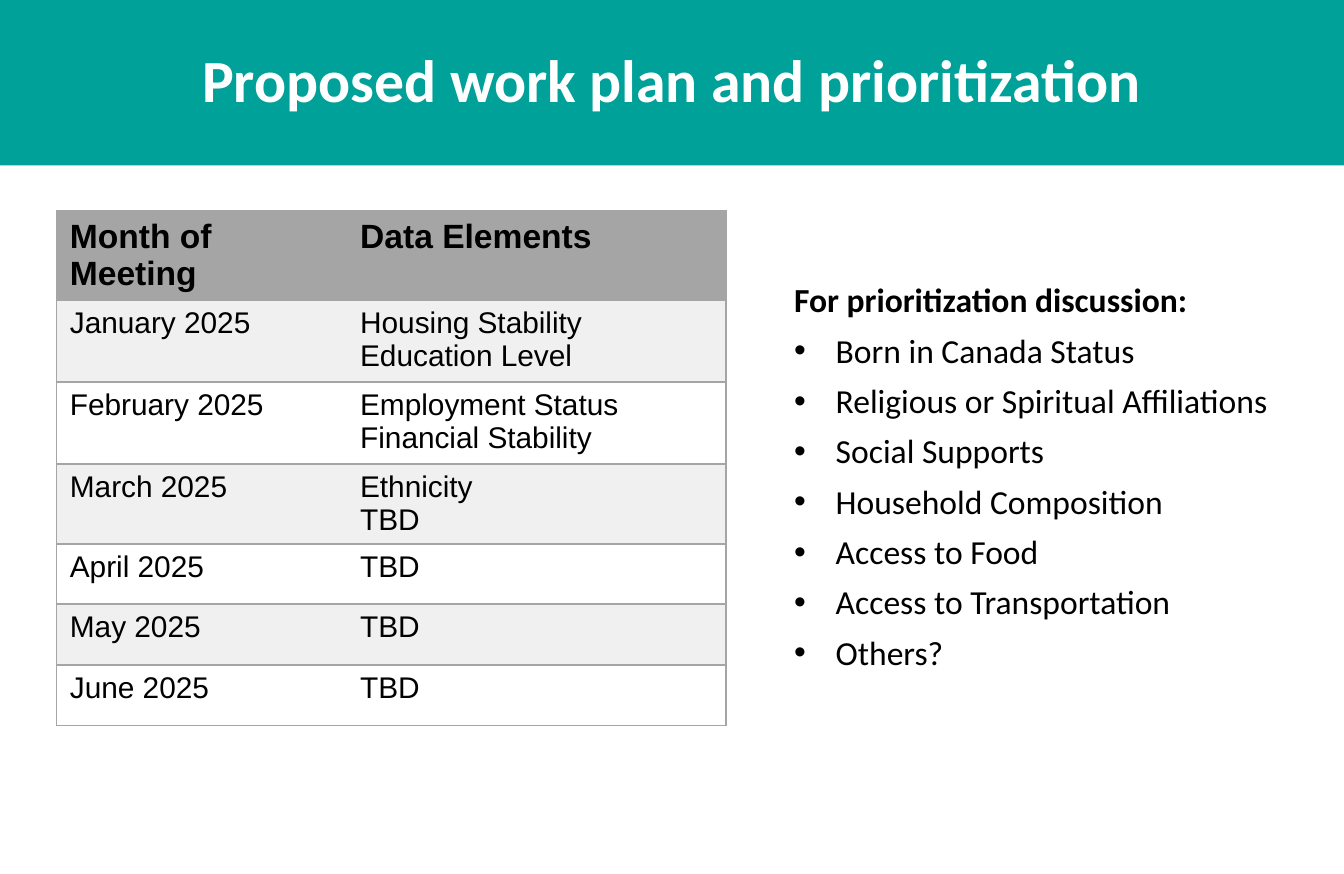
import pptx
import pptx.dml.color
import pptx.enum.shapes
import pptx.enum.text
import pptx.oxml
import pptx.oxml.ns
import pptx.util
from pptx.util import Inches

TEAL, GREY, BAND, WHITE, BLACK = "00A199", "A5A5A5", "F0F0F0", "FFFFFF", "000000"
NO_STYLE_NO_GRID = "{2D5ABB26-0587-4C30-8999-92F81FD0307C}"

SCHEDULE = [
    ("Month of Meeting", "Data Elements"),
    ("January 2025", "Housing Stability\nEducation Level"),
    ("February 2025", "Employment Status\nFinancial Stability"),
    ("March 2025", "Ethnicity\nTBD"),
    ("April 2025", "TBD"),
    ("May 2025", "TBD"),
    ("June 2025", "TBD"),
]
COLUMN_WIDTHS = [2.16, 2.82]
ROW_HEIGHTS = [0.45, 0.61, 0.61, 0.45, 0.45, 0.45, 0.45]

DISCUSSION_TOPICS = [
    "Born in Canada Status",
    "Religious or Spiritual Affiliations",
    "Social Supports",
    "Household Composition",
    "Access to Food",
    "Access to Transportation",
    "Others?",
]


def rgb(hex_color):
    return pptx.dml.color.RGBColor.from_string(hex_color)


def set_fill(target, color):
    target.fill.solid()
    target.fill.fore_color.rgb = rgb(color)


def set_font(paragraph, name, size, color=BLACK, bold=False):
    font = paragraph.font
    font.name, font.size, font.bold = name, pptx.util.Pt(size), bold
    font.color.rgb = rgb(color)


def add_borders(cell, sides, color):
    """Draw 1 pt borders; sides must be in the order L, R, T, B, before any fill."""
    properties = cell._tc.get_or_add_tcPr()
    for side in sides:
        properties.append(pptx.oxml.parse_xml(
            f'<a:ln{side} {pptx.oxml.ns.nsdecls("a")} w="{pptx.util.Pt(1)}">'
            f'<a:solidFill><a:srgbClr val="{color}"/></a:solidFill></a:ln{side}>'))


def add_bullet(paragraph, indent):
    properties = paragraph._p.get_or_add_pPr()
    properties.set("marL", str(indent))
    properties.set("indent", str(-indent))
    properties.append(pptx.oxml.parse_xml(
        f'<a:buFont {pptx.oxml.ns.nsdecls("a")} typeface="Arial"/>'))
    properties.append(pptx.oxml.parse_xml(
        f'<a:buChar {pptx.oxml.ns.nsdecls("a")} char="•"/>'))


def add_title_banner(slide, title):
    banner = slide.shapes.add_shape(
        pptx.enum.shapes.MSO_SHAPE.RECTANGLE, 0, 0, Inches(10), Inches(1.23))
    banner.shadow.inherit = False
    set_fill(banner, TEAL)
    banner.line.fill.background()
    frame = banner.text_frame
    frame.vertical_anchor = pptx.enum.text.MSO_ANCHOR.MIDDLE
    heading = frame.paragraphs[0]
    heading.text = title
    heading.alignment = pptx.enum.text.PP_ALIGN.CENTER
    heading.line_spacing = 0.9
    set_font(heading, "Calibri", 32, WHITE, bold=True)


def add_schedule(slide):
    table = slide.shapes.add_table(
        len(SCHEDULE), len(COLUMN_WIDTHS), Inches(0.42), Inches(1.57),
        Inches(sum(COLUMN_WIDTHS)), Inches(sum(ROW_HEIGHTS))).table
    style_id = table._tbl.tblPr.find(pptx.oxml.ns.qn("a:tableStyleId"))
    style_id.text = NO_STYLE_NO_GRID
    for column, width in zip(table.columns, COLUMN_WIDTHS):
        column.width = Inches(width)
    for row, height in zip(table.rows, ROW_HEIGHTS):
        row.height = Inches(height)
    for r, entries in enumerate(SCHEDULE):
        is_header = r == 0
        row_color = GREY if is_header else BAND if r % 2 else WHITE
        for c, entry in enumerate(entries):
            cell = table.cell(r, c)
            cell.text = entry
            add_borders(cell, "LTB" if c == 0 else "RTB", GREY)
            set_fill(cell, row_color)
            for paragraph in cell.text_frame.paragraphs:
                set_font(paragraph, "Arial", 18 if is_header else 16, bold=is_header)


def add_discussion_list(slide, heading, topics):
    frame = slide.shapes.add_textbox(
        Inches(5.81), Inches(1.91), Inches(3.89), Inches(3.14)).text_frame
    frame.word_wrap = True
    frame.vertical_anchor = pptx.enum.text.MSO_ANCHOR.BOTTOM
    frame.text = "\n".join([heading, *topics])
    for i, paragraph in enumerate(frame.paragraphs):
        paragraph.line_spacing = 0.9
        if i > 0:
            paragraph.space_before = pptx.util.Pt(7.5)
            add_bullet(paragraph, Inches(0.31))
        set_font(paragraph, "Calibri", 18, bold=i == 0)


def main():
    presentation = pptx.Presentation()
    presentation.slide_width = Inches(10)
    presentation.slide_height = Inches(6.5)
    slide = presentation.slides.add_slide(presentation.slide_layouts[6])
    add_schedule(slide)
    add_discussion_list(slide, "For prioritization discussion:", DISCUSSION_TOPICS)
    add_title_banner(slide, "Proposed work plan and prioritization")
    presentation.save("out.pptx")


if __name__ == "__main__":
    main()
